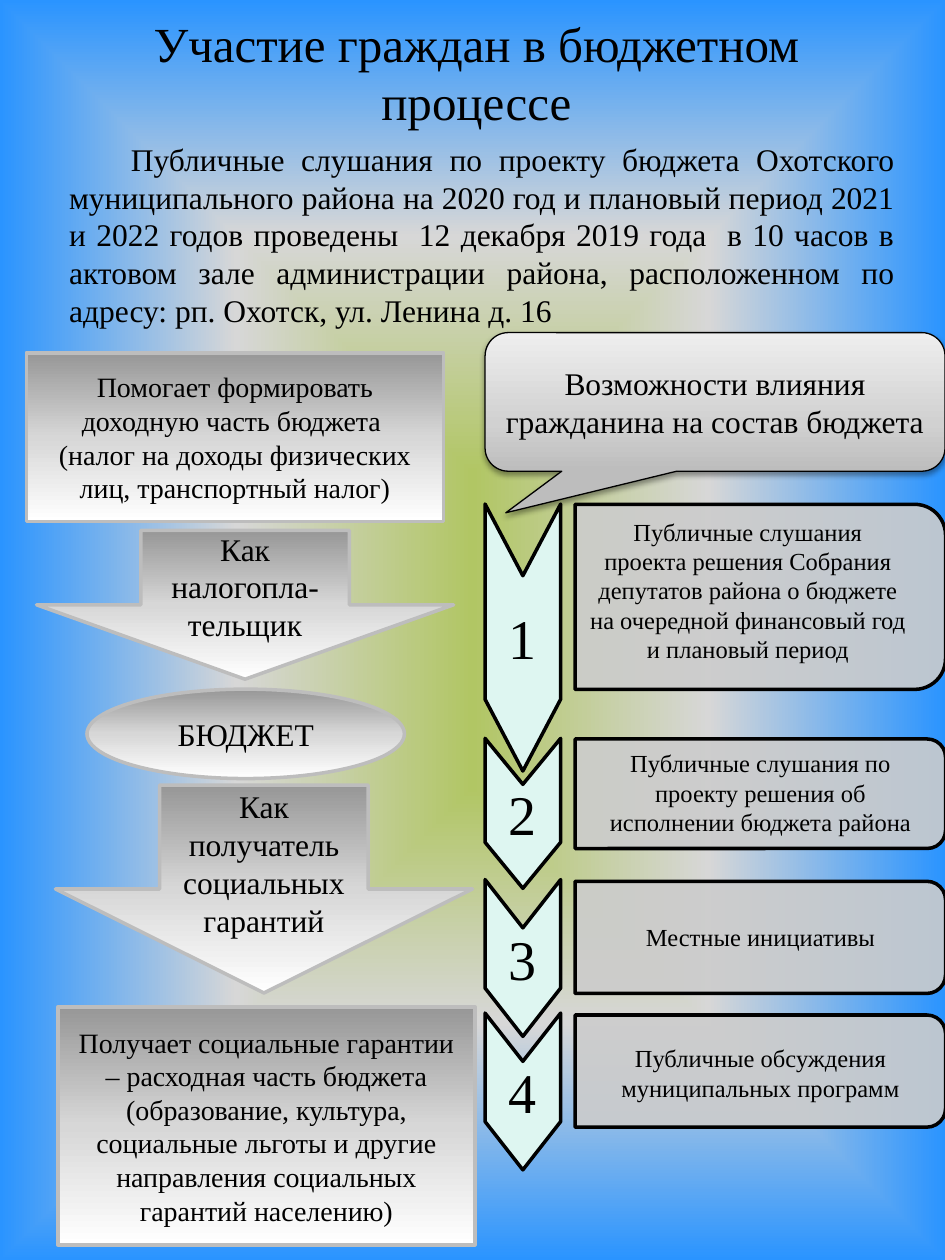
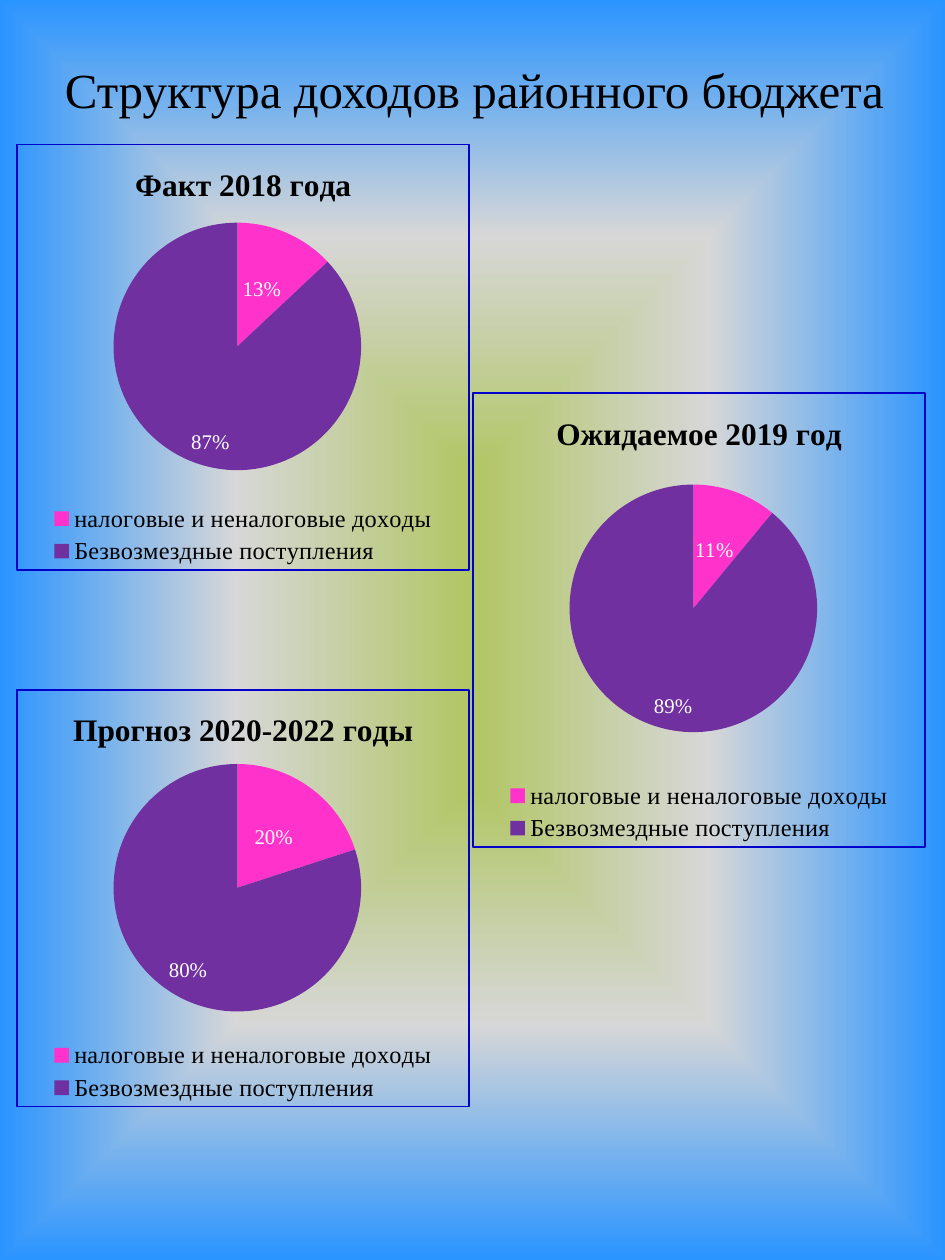
from typing import NamedTuple

from pptx import Presentation
from pptx.chart.data import CategoryChartData
from pptx.dml.color import RGBColor
from pptx.enum.chart import XL_CHART_TYPE, XL_LABEL_POSITION, XL_LEGEND_POSITION
from pptx.enum.shapes import MSO_SHAPE
from pptx.enum.text import MSO_ANCHOR, MSO_AUTO_SIZE, PP_ALIGN
from pptx.oxml import parse_xml
from pptx.oxml.ns import nsdecls, qn
from pptx.util import Pt

FONT = "Times New Roman"
BLACK = RGBColor(0x00, 0x00, 0x00)
WHITE = RGBColor(0xFF, 0xFF, 0xFF)
GREEN = RGBColor(0xB1, 0xC6, 0x64)
MIST = RGBColor(0xD7, 0xD7, 0xD7)
BLUE = RGBColor(0x2A, 0x94, 0xFF)
STEEL = RGBColor(0x97, 0x97, 0x97)
SILVER = RGBColor(0xBD, 0xBD, 0xBD)
PALE = RGBColor(0xD1, 0xD1, 0xD1)
LIGHT = RGBColor(0xEE, 0xEE, 0xEE)
PANEL_GREY = RGBColor(0xCC, 0xCC, 0xCC)
MINT = RGBColor(0xDE, 0xF6, 0xF1)
PINK = RGBColor(0xFF, 0x33, 0xCC)
PURPLE = RGBColor(0x70, 0x30, 0xA0)
BORDER_BLUE = RGBColor(0x00, 0x00, 0xCC)

BACKGROUND_STOPS = ((0, GREEN), (50, MIST), (100, BLUE))
ROLE_STOPS = ((0, STEEL), (50, MIST), (100, WHITE))
CALLOUT_STOPS = ((0, SILVER), (35, PALE), (100, LIGHT))
CENTRE_PATH = (
    '<a:path path="shape"><a:fillToRect l="50000" t="50000" r="50000" b="50000"/></a:path>'
)

CHEVRON_LEFT, CHEVRON_WIDTH = 277.2, 43.2
PANEL_LEFT, PANEL_WIDTH = 328.6, 211.7
NOTE_WIDTH = 195.1
CHART_WIDTH = 259.2
PLOT_LAYOUT = {"x": 0.213, "y": 0.138, "w": 0.548, "h": 0.674}
INCOME_KINDS = ("налоговые и неналоговые доходы", "Безвозмездные поступления")


class Box(NamedTuple):
    left: float
    top: float
    width: float
    height: float

    def lengths(self) -> tuple:
        return tuple(Pt(value) for value in self)


class Role(NamedTuple):
    preset: MSO_SHAPE
    box: Box
    size: int
    paragraphs: tuple


class Step(NamedTuple):
    top: float
    height: float
    notch: float
    panel_top: float
    panel_height: float
    note_left: float
    note_top: float
    note_height: float
    note: str


class IncomeChart(NamedTuple):
    title: str
    left: float
    top: float
    height: float
    values: tuple


ROLES = (
    Role(MSO_SHAPE.RECTANGLE, Box(15.1, 201.6, 238.3, 96.5), 16,
         ("Помогает формировать доходную часть бюджета ",
          "(налог на доходы физических лиц, транспортный налог)")),
    Role(MSO_SHAPE.DOWN_ARROW, Box(20.9, 303.1, 238.3, 85), 18,
         ("Как налогопла-тельщик",)),
    Role(MSO_SHAPE.OVAL, Box(49.7, 393.8, 181.4, 51.1), 18, ("БЮДЖЕТ",)),
    Role(MSO_SHAPE.DOWN_ARROW, Box(31.7, 448.6, 238.3, 118.8), 18,
         ("Как получатель социальных гарантий",)),
    Role(MSO_SHAPE.RECTANGLE, Box(33.1, 575.3, 238.3, 136.1), 16,
         ("Получает социальные гарантии – расходная часть бюджета (образование, культура, "
          "социальные льготы и другие направления социальных гарантий населению)",)),
)

STEPS = (
    Step(288, 152.6, 41, 288.2, 105.8, 329.8, 291.6, 92.2,
         "Публичные слушания проекта решения Собрания депутатов района о бюджете "
         "на очередной финансовый год и плановый период"),
    Step(421.9, 85.7, 26.3, 422.3, 62.6, 337, 424.1, 58.3,
         "Публичные слушания по проекту решения об исполнении бюджета района"),
    Step(502.6, 89.6, 27.6, 503.6, 64.1, 337, 523.4, 24.5, "Местные инициативы"),
    Step(578.9, 89.6, 27.6, 580, 64.1, 337, 592.6, 41,
         "Публичные обсуждения муниципальных программ"),
)

CHARTS = (
    IncomeChart("Ожидаемое 2019 год", 270, 223.9, 260.6, (0.11, 0.89)),
    IncomeChart("Факт 2018 года", 9.4, 82.1, 244.1, (0.13, 0.87)),
    IncomeChart("Прогноз 2020-2022 годы", 9.4, 393.8, 239, (0.2, 0.8)),
)


def set_font(font, size: float, color: RGBColor = BLACK) -> None:
    font.name = FONT
    font.size = Pt(size)
    font.color.rgb = color


def set_gradient(fill, element, stops: tuple, direction: str) -> None:
    fill.gradient()
    gradient = element.find(".//" + qn("a:gradFill"))
    stop_xml = "".join(
        f'<a:gs pos="{position * 1000}"><a:srgbClr val="{color}"/></a:gs>'
        for position, color in stops
    )
    gradient.getparent().replace(gradient, parse_xml(
        f'<a:gradFill {nsdecls("a")} rotWithShape="1"><a:gsLst>{stop_xml}</a:gsLst>'
        f"{direction}</a:gradFill>"
    ))


def linear(angle: int) -> str:
    return f'<a:lin ang="{angle * 60000}" scaled="0"/>'


def write(text_frame, paragraphs: tuple, size: float, align=PP_ALIGN.CENTER,
          anchor=MSO_ANCHOR.MIDDLE) -> None:
    text_frame.word_wrap = True
    text_frame.auto_size = MSO_AUTO_SIZE.NONE
    text_frame.vertical_anchor = anchor
    for index, text in enumerate(paragraphs):
        paragraph = text_frame.paragraphs[0] if index == 0 else text_frame.add_paragraph()
        paragraph.alignment = align
        run = paragraph.add_run()
        run.text = text
        set_font(run.font, size)


def set_line(shape, color: RGBColor, width: float) -> None:
    shape.shadow.inherit = False
    shape.line.color.rgb = color
    shape.line.width = Pt(width)


def add_titled_slide(presentation, title: str, box: Box):
    slide = presentation.slides.add_slide(presentation.slide_layouts[5])
    placeholder = slide.shapes.title
    placeholder.left, placeholder.top, placeholder.width, placeholder.height = box.lengths()
    write(placeholder.text_frame, (title,), 28)
    return slide


def add_text(slide, box: Box, text: str, size: float, align=PP_ALIGN.CENTER):
    text_box = slide.shapes.add_textbox(*box.lengths())
    write(text_box.text_frame, (text,), size, align, MSO_ANCHOR.TOP)
    return text_box


def add_role(slide, role: Role) -> None:
    shape = slide.shapes.add_shape(role.preset, *role.box.lengths())
    set_gradient(shape.fill, shape._element, ROLE_STOPS, linear(90))
    set_line(shape, SILVER, 2)
    write(shape.text_frame, role.paragraphs, role.size)


def add_panel(slide, step: Step) -> None:
    offset = (PANEL_WIDTH - step.panel_height) / 2
    box = Box(PANEL_LEFT + offset, step.panel_top - offset, step.panel_height, PANEL_WIDTH)
    panel = slide.shapes.add_shape(MSO_SHAPE.ROUND_2_SAME_RECTANGLE, *box.lengths())
    panel.rotation = 90
    panel.fill.solid()
    panel.fill.fore_color.rgb = PANEL_GREY
    color = panel._element.spPr.find(qn("a:solidFill")).find(qn("a:srgbClr"))
    color.append(parse_xml(f'<a:alpha {nsdecls("a")} val="90000"/>'))
    set_line(panel, BLACK, 2)


def add_chevron(slide, step: Step, number: int) -> None:
    right, middle = CHEVRON_LEFT + CHEVRON_WIDTH, CHEVRON_LEFT + CHEVRON_WIDTH / 2
    bottom = step.top + step.height
    outline = (
        (right, bottom - step.notch),
        (middle, bottom),
        (CHEVRON_LEFT, bottom - step.notch),
        (CHEVRON_LEFT, step.top),
        (middle, step.top + step.notch),
    )
    builder = slide.shapes.build_freeform(Pt(right), Pt(step.top))
    builder.add_line_segments([(Pt(x), Pt(y)) for x, y in outline], close=True)
    chevron = builder.convert_to_shape()
    chevron.fill.solid()
    chevron.fill.fore_color.rgb = MINT
    set_line(chevron, BLACK, 2)
    frame = chevron.text_frame
    frame.margin_left = frame.margin_right = Pt(2.9)
    write(frame, (str(number),), 32)


def add_callout(slide, box: Box, text: str) -> None:
    callout = slide.shapes.add_shape(MSO_SHAPE.ROUNDED_RECTANGULAR_CALLOUT, *box.lengths())
    for index, value in enumerate((-0.455, 0.8, 0.167)):
        callout.adjustments[index] = value
    set_gradient(callout.fill, callout._element, CALLOUT_STOPS, linear(270))
    set_line(callout, BLACK, 0.75)
    callout._element.spPr.find(qn("a:effectLst")).append(parse_xml(
        f'<a:outerShdw {nsdecls("a")} blurRad="{Pt(3.1)}" dist="{Pt(1.6)}" dir="5400000" '
        f'rotWithShape="0"><a:srgbClr val="{BLACK}"><a:alpha val="38000"/></a:srgbClr>'
        "</a:outerShdw>"
    ))
    write(callout.text_frame, (text,), 18)


def frame_chart(chart) -> None:
    chart_element = chart._chartSpace.find(qn("c:chart"))
    chart_element.addnext(parse_xml(
        f'<c:spPr {nsdecls("c", "a")}><a:noFill/><a:ln w="{Pt(1)}"><a:solidFill>'
        f'<a:srgbClr val="{BORDER_BLUE}"/></a:solidFill></a:ln></c:spPr>'
    ))
    plot_area = chart_element.find(qn("c:plotArea"))
    for layout in plot_area.findall(qn("c:layout")):
        plot_area.remove(layout)
    edges = "".join(f'<c:{key} val="{value}"/>' for key, value in PLOT_LAYOUT.items())
    plot_area.insert(0, parse_xml(
        f'<c:layout {nsdecls("c")}><c:manualLayout><c:layoutTarget val="inner"/>'
        f'<c:xMode val="edge"/><c:yMode val="edge"/>{edges}</c:manualLayout></c:layout>'
    ))


def add_income_chart(slide, income: IncomeChart) -> None:
    data = CategoryChartData(number_format="0%")
    data.categories = INCOME_KINDS
    data.add_series(income.title, income.values)
    box = Box(income.left, income.top, CHART_WIDTH, income.height)
    chart = slide.shapes.add_chart(XL_CHART_TYPE.PIE, *box.lengths(), data).chart
    set_font(chart.font, 18)
    chart.has_title = True
    run = chart.chart_title.text_frame.paragraphs[0].add_run()
    run.text = income.title
    set_font(run.font, 18)
    run.font.bold = True
    chart.chart_title.include_in_layout = False
    chart.has_legend = True
    chart.legend.position = XL_LEGEND_POSITION.BOTTOM
    chart.legend.include_in_layout = False
    set_font(chart.legend.font, 14)
    plot = chart.plots[0]
    plot.vary_by_categories = True
    series = plot.series[0]
    for index, color in enumerate((PINK, PURPLE)):
        fill = series.points[index].format.fill
        fill.solid()
        fill.fore_color.rgb = color
    labels = series.data_labels
    labels.show_value = True
    labels.number_format = "0%"
    labels.number_format_is_linked = False
    labels.position = XL_LABEL_POSITION.INSIDE_END
    set_font(labels.font, 12, WHITE)
    small_share_label = series.points[0].data_label
    set_font(small_share_label.font, 12, WHITE)
    small_share_label.position = XL_LABEL_POSITION.CENTER
    frame_chart(chart)


def build_participation(presentation) -> None:
    slide = add_titled_slide(presentation, "Участие граждан в бюджетном процессе",
                             Box(31.7, 0, 481, 82.1))
    for number, step in enumerate(STEPS, 1):
        add_panel(slide, step)
        add_chevron(slide, step, number)
        add_text(slide, Box(step.note_left, step.note_top, NOTE_WIDTH, step.note_height),
                 step.note, 14)
    hearing = add_text(
        slide, Box(32.4, 76.3, 486, 115),
        "Публичные слушания по проекту бюджета Охотского муниципального района на 2020 год "
        "и плановый период 2021 и 2022 годов проведены  12 декабря 2019 года  в 10 часов "
        "в актовом зале администрации района, расположенном по адресу: рп. Охотск, "
        "ул. Ленина д. 16", 18, PP_ALIGN.JUSTIFY)
    hearing.text_frame.paragraphs[0]._p.get_or_add_pPr().set("indent", str(Pt(35.3)))
    for role in ROLES:
        add_role(slide, role)
    add_callout(slide, Box(277.2, 190.1, 262.8, 79.2),
                "Возможности влияния гражданина на состав бюджета")


def build_income(presentation) -> None:
    slide = add_titled_slide(presentation, "Структура доходов районного бюджета",
                             Box(28.1, 11.5, 486, 78.5))
    for income in CHARTS:
        add_income_chart(slide, income)


def main() -> None:
    presentation = Presentation()
    presentation.slide_width, presentation.slide_height = Pt(540), Pt(720)
    master = presentation.slide_master
    set_gradient(master.background.fill, master._element, BACKGROUND_STOPS, CENTRE_PATH)
    build_participation(presentation)
    build_income(presentation)
    presentation.save("out.pptx")


if __name__ == "__main__":
    main()
